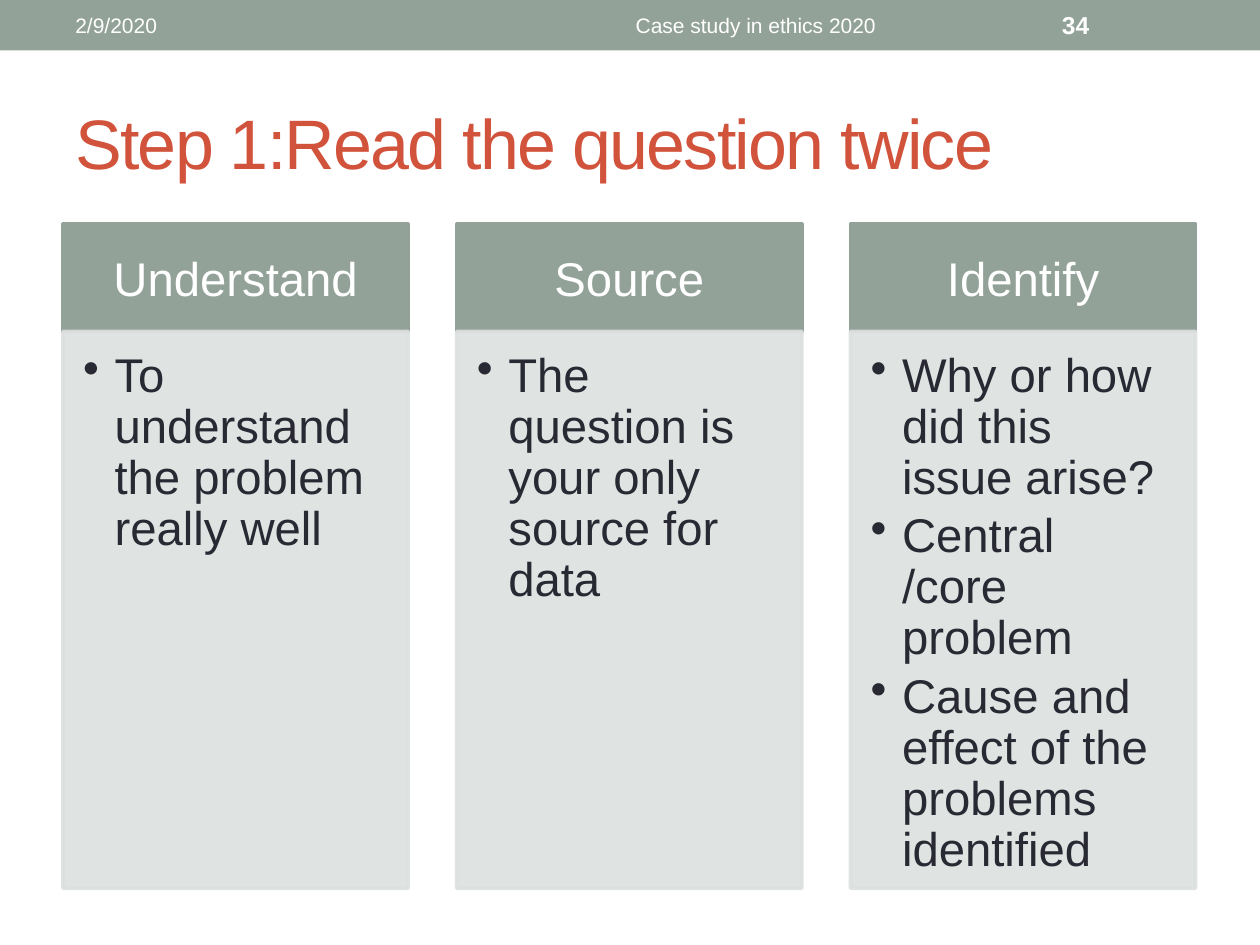
from dataclasses import dataclass

from lxml import etree
from pptx import Presentation
from pptx.dml.color import RGBColor
from pptx.enum.shapes import MSO_SHAPE
from pptx.enum.text import MSO_ANCHOR, PP_ALIGN
from pptx.oxml.ns import qn
from pptx.util import Inches, Pt

RECTANGLE = MSO_SHAPE.RECTANGLE
TOP, MIDDLE = MSO_ANCHOR.TOP, MSO_ANCHOR.MIDDLE
LEFT, CENTER = PP_ALIGN.LEFT, PP_ALIGN.CENTER


@dataclass(frozen=True)
class Theme:
    font: str = "Arial"
    sage: str = "93A299"
    pale: str = "DCE0DE"
    rust: str = "D2533C"
    ink: str = "292934"
    white: str = "FFFFFF"
    title_size: int = 40
    column_size: int = 27
    footer_size: int = 12
    number_size: int = 14
    outline: float = 2.08


THEME = Theme()

SLIDE_WIDTH, SLIDE_HEIGHT = 10, 7.5
MARGIN = 0.5
BAR_HEIGHT = 0.4
COLUMN_PITCH = 3.125
COLUMN_WIDTH = 2.74
HEADING_TOP, HEADING_HEIGHT = 1.78, 0.85
BODY_HEIGHT = 4.42
BULLET_INDENT = 0.25
DEFAULT_INSETS = (0.1, 0.05, 0.1, 0.05)
HEADING_INSETS = (0.21, 0.12, 0.21, 0.12)
BODY_INSETS = (0.16, 0.16, 0.21, 0.24)

COLUMNS = [
    ("Understand", ["To understand the problem really well"]),
    ("Source", ["The question is your only source for data"]),
    ("Identify", ["Why or how did this issue arise?",
                  "Central /core problem",
                  "Cause and effect of the problems identified"]),
]


def write(shape, lines, size, color, align=LEFT, anchor=MIDDLE,
          insets=DEFAULT_INSETS, bold=False):
    frame = shape.text_frame
    frame.word_wrap = True
    frame.vertical_anchor = anchor
    (frame.margin_left, frame.margin_top,
     frame.margin_right, frame.margin_bottom) = map(Inches, insets)
    frame.text = "\n".join(lines)
    for paragraph in frame.paragraphs:
        paragraph.alignment = align
        for run in paragraph.runs:
            run.font.name = THEME.font
            run.font.size = Pt(size)
            run.font.bold = bold
            run.font.color.rgb = RGBColor.from_string(color)
    return frame


def add_label(slide, box, text, size, color, **style):
    label = slide.shapes.add_textbox(*map(Inches, box))
    return write(label, [text], size, color, **style)


def add_panel(slide, box, color, opacity=100, outlined=True):
    panel = slide.shapes.add_shape(RECTANGLE, *map(Inches, box))
    panel.shadow.inherit = False
    panel.fill.solid()
    panel.fill.fore_color.rgb = RGBColor.from_string(color)
    if outlined:
        panel.line.width = Pt(THEME.outline)
        panel.line.color.rgb = RGBColor.from_string(color)
    else:
        panel.line.fill.background()
    if opacity < 100:
        for tint in panel.element.spPr.iter(qn("a:srgbClr")):
            etree.SubElement(tint, qn("a:alpha"), val=str(opacity * 1000))
    return panel


def add_bullet(paragraph):
    properties = paragraph._p.get_or_add_pPr()
    properties.set("marL", str(Inches(BULLET_INDENT)))
    properties.set("indent", str(-Inches(BULLET_INDENT)))
    etree.SubElement(properties, qn("a:buChar"), char="•")


def add_column(slide, index, heading, points):
    left = MARGIN + index * COLUMN_PITCH
    header = add_panel(slide, (left, HEADING_TOP, COLUMN_WIDTH, HEADING_HEIGHT),
                       THEME.sage)
    write(header, [heading], THEME.column_size, THEME.white,
          align=CENTER, insets=HEADING_INSETS)

    body_top = HEADING_TOP + HEADING_HEIGHT
    body = add_panel(slide, (left, body_top, COLUMN_WIDTH, BODY_HEIGHT),
                     THEME.pale, opacity=90)
    frame = write(body, points, THEME.column_size, THEME.ink,
                  anchor=TOP, insets=BODY_INSETS)
    for paragraph in frame.paragraphs:
        paragraph.line_spacing = 0.9
        paragraph.space_after = Pt(0.15 * THEME.column_size)
        add_bullet(paragraph)


def add_title(slide, text):
    frame = add_label(slide, (MARGIN, 0.58, SLIDE_WIDTH - 2 * MARGIN, 1.08),
                      text, THEME.title_size, THEME.rust)
    for run in frame.paragraphs[0].runs:
        run.font._element.set("spc", "-100")


def add_top_bar(slide, date, topic, number):
    add_panel(slide, (0, 0, SLIDE_WIDTH, BAR_HEIGHT), THEME.sage, outlined=False)
    top, height = 0.02, BAR_HEIGHT - 0.04
    add_label(slide, (MARGIN, top, 3.17, height), date,
              THEME.footer_size, THEME.white)
    add_label(slide, (3.75, top, 4.5, height), topic,
              THEME.footer_size, THEME.white, align=CENTER)
    add_label(slide, (8.33, top, 1.17, height), number,
              THEME.number_size, THEME.white, bold=True)


def main():
    deck = Presentation()
    deck.slide_width, deck.slide_height = Inches(SLIDE_WIDTH), Inches(SLIDE_HEIGHT)
    slide = deck.slides.add_slide(deck.slide_layouts[6])
    add_top_bar(slide, "2/9/2020", "Case study in ethics 2020", "34")
    add_title(slide, "Step 1:Read the question twice")
    for index, (heading, points) in enumerate(COLUMNS):
        add_column(slide, index, heading, points)
    deck.save("out.pptx")


if __name__ == "__main__":
    main()
